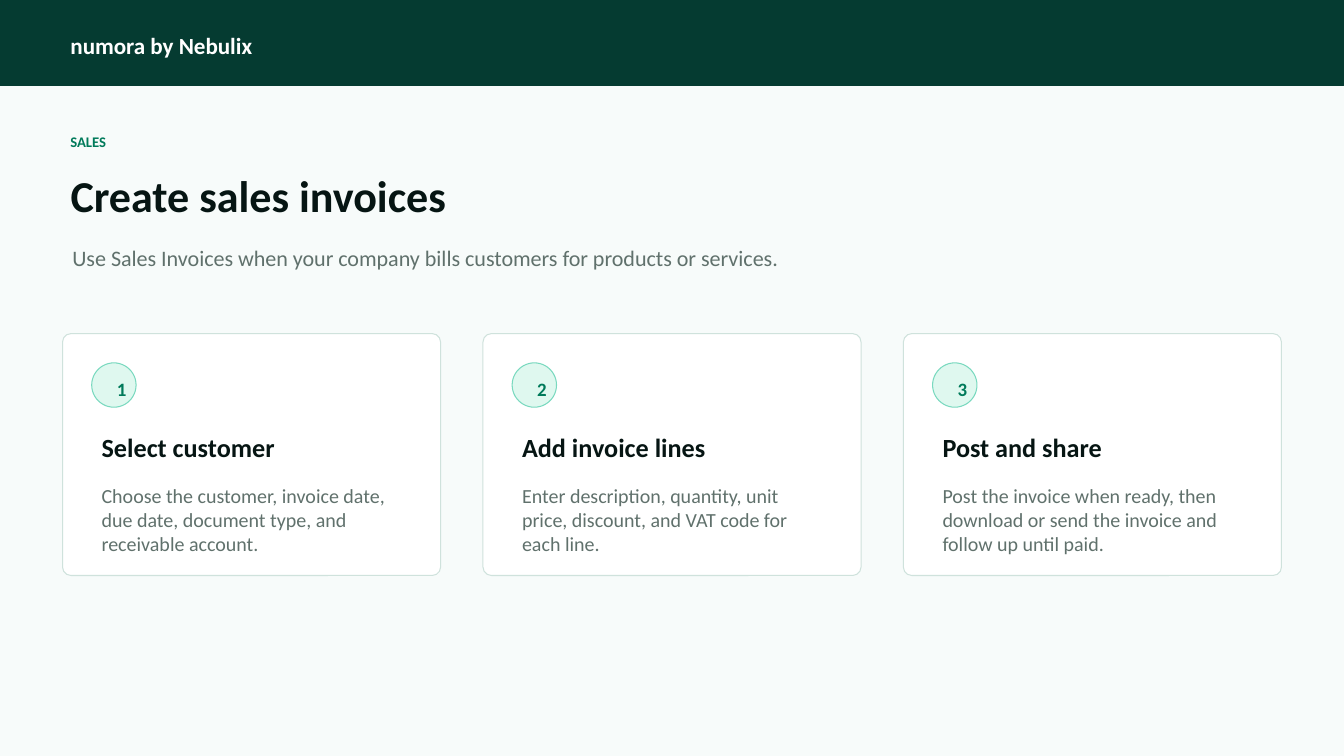
from dataclasses import dataclass

from pptx import Presentation
from pptx.dml.color import RGBColor
from pptx.enum.shapes import MSO_SHAPE as Shape
from pptx.enum.text import MSO_ANCHOR as Anchor, MSO_AUTO_SIZE as AutoSize, PP_ALIGN as Align
from pptx.util import Inches, Pt


@dataclass(frozen=True)
class Theme:
    font: str = "Calibri"
    background: str = "F7FBFA"
    banner: str = "053B31"
    white: str = "FFFFFF"
    accent: str = "007A5A"
    ink: str = "061513"
    muted: str = "60716C"
    card_line: str = "CFE2DC"
    badge: str = "DFF8EF"
    badge_line: str = "79D9BF"
    brand_size: float = 16.5
    section_size: float = 10.5
    title_size: float = 31.5
    lead_size: float = 15.75
    number_size: float = 13.5
    heading_size: float = 18.75
    body_size: float = 14.25


theme = Theme()

presentation = Presentation()
presentation.slide_width = Inches(13.33)
presentation.slide_height = Inches(7.5)
slide = presentation.slides.add_slide(presentation.slide_layouts[5])
slide.background.fill.solid()
slide.background.fill.fore_color.rgb = RGBColor.from_string(theme.background)


def add_panel(kind, box, fill, line):
    shape = slide.shapes.add_shape(kind, *map(Inches, box))
    shape.shadow.inherit = False
    shape.fill.solid()
    shape.fill.fore_color.rgb = RGBColor.from_string(fill)
    shape.line.color.rgb = RGBColor.from_string(line)
    shape.line.width = Pt(0.75)
    return shape


def write_text(box, text, size, color, bold=True, shape=None):
    shape = shape or slide.shapes.add_textbox(0, 0, 0, 0)
    shape.left, shape.top, shape.width, shape.height = map(Inches, box)
    frame = shape.text_frame
    frame.text = text
    frame.word_wrap = True
    frame.auto_size = AutoSize.NONE
    frame.vertical_anchor = Anchor.TOP
    paragraph = frame.paragraphs[0]
    paragraph.alignment = Align.LEFT
    paragraph.font.name = theme.font
    paragraph.font.size = Pt(size)
    paragraph.font.bold = bold
    paragraph.font.color.rgb = RGBColor.from_string(color)


margin = 0.6
add_panel(Shape.RECTANGLE, (0, 0, 13.33, 0.85), theme.banner, theme.banner)
write_text((margin, 0.26, 2.92, 0.35), "numora by Nebulix", theme.brand_size, theme.white)
write_text((margin, 1.27, 4.48, 0.29), "SALES", theme.section_size, theme.accent)
write_text((margin, 1.62, 9.38, 0.69), "Create sales invoices", theme.title_size, theme.ink,
           shape=slide.shapes.title)

grid_left, grid_top = 0.62, 3.31
card_width, card_height, card_gap = 3.75, 2.4, 0.42
padding = 0.29
text_width = card_width - 2 * padding

write_text((grid_left, 2.38, 10, 0.5),
           "Use Sales Invoices when your company bills customers for products or services.",
           theme.lead_size, theme.muted, bold=False)

steps = [
    ("Select customer",
     "Choose the customer, invoice date, due date, document type, and receivable account."),
    ("Add invoice lines",
     "Enter description, quantity, unit price, discount, and VAT code for each line."),
    ("Post and share",
     "Post the invoice when ready, then download or send the invoice and follow up until paid."),
]

for column, (heading, body) in enumerate(steps):
    left = grid_left + column * (card_width + card_gap)
    inner = left + padding
    card = add_panel(Shape.ROUNDED_RECTANGLE, (left, grid_top, card_width, card_height),
                     theme.white, theme.card_line)
    card.adjustments[0] = 0.035
    add_panel(Shape.OVAL, (inner, grid_top + padding, 0.44, 0.44), theme.badge, theme.badge_line)
    write_text((inner + 0.15, grid_top + 0.39, 0.21, 0.25), str(column + 1),
               theme.number_size, theme.accent)
    write_text((inner, grid_top + 0.92, text_width, 0.44), heading, theme.heading_size, theme.ink)
    write_text((inner, grid_top + 1.44, text_width, 0.73), body,
               theme.body_size, theme.muted, bold=False)

presentation.save("out.pptx")
